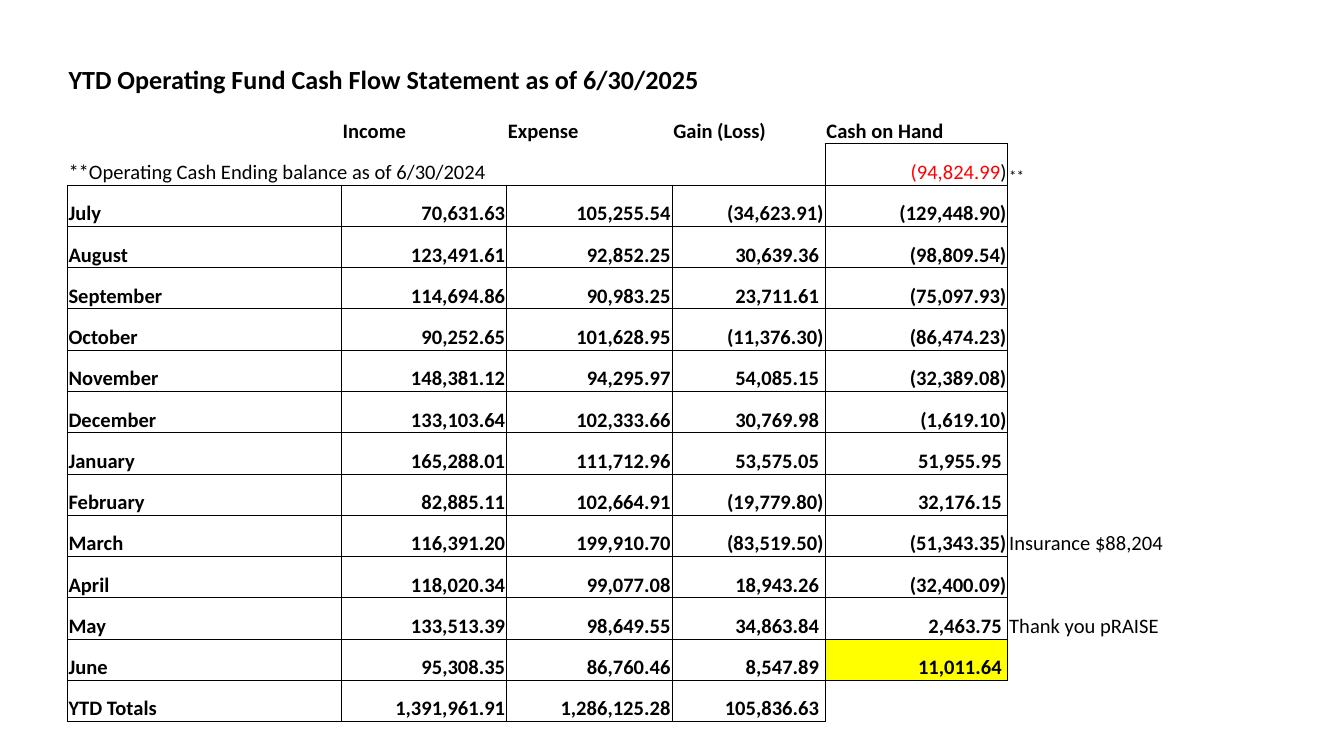
from lxml.etree import SubElement
from pptx import Presentation
from pptx.dml.color import RGBColor
from pptx.enum.text import MSO_ANCHOR, PP_ALIGN
from pptx.oxml.ns import qn
from pptx.util import Inches, Pt

FONT = "Calibri"
BLACK, RED, YELLOW = "000000", "FF0000", "FFFF00"
NO_STYLE_NO_GRID = "{2D5ABB26-0587-4C30-8999-92F81FD0307C}"

TITLE = "YTD Operating Fund Cash Flow Statement as of 6/30/2025"
HEADINGS = ["Income", "Expense", "Gain (Loss)", "Cash on Hand"]
OPENING_LABEL = "**Operating Cash Ending balance as of 6/30/2024"
OPENING_BALANCE = [("(94,824.99", RED), (")", BLACK)]
# label, income, expense, gain or loss, cash on hand
MONTHS = [
    ("July", 70631.63, 105255.54, -34623.91, -129448.90),
    ("August", 123491.61, 92852.25, 30639.36, -98809.54),
    ("September", 114694.86, 90983.25, 23711.61, -75097.93),
    ("October", 90252.65, 101628.95, -11376.30, -86474.23),
    ("November", 148381.12, 94295.97, 54085.15, -32389.08),
    ("December", 133103.64, 102333.66, 30769.98, -1619.10),
    ("January", 165288.01, 111712.96, 53575.05, 51955.95),
    ("February", 82885.11, 102664.91, -19779.80, 32176.15),
    ("March", 116391.20, 199910.70, -83519.50, -51343.35),
    ("April", 118020.34, 99077.08, 18943.26, -32400.09),
    ("May", 133513.39, 98649.55, 34863.84, 2463.75),
    ("June", 95308.35, 86760.46, 8547.89, 11011.64),
]
TOTALS = ("YTD Totals", 1391961.91, 1286125.28, 105836.63)
NOTES = {"March": "Insurance $88,204", "May": "Thank you pRAISE"}
HIGHLIGHTED_MONTH = "June"

SLIDE_WIDTH = Inches(10)
SLIDE_HEIGHT = SLIDE_WIDTH * 9 // 16
LEFT, TOP, TABLE_HEIGHT = 0.5, 0.34, 5.03
COLUMN_WIDTHS = [2.04, 1.23, 1.23, 1.14, 1.36, 0.96, 0.96]
TITLE_ROW, HEADING_ROW, OPENING_ROW, FIRST_MONTH_ROW = range(4)
TOTAL_ROW = FIRST_MONTH_ROW + len(MONTHS)
TOP_HEIGHTS = [0.38, 0.35]
BODY_ROWS = TOTAL_ROW - HEADING_ROW
ROW_HEIGHTS = TOP_HEIGHTS + [(TABLE_HEIGHT - sum(TOP_HEIGHTS)) / BODY_ROWS] * BODY_ROWS
GAIN, CASH, NOTE = 3, 4, 5
SPANS = {(TITLE_ROW, 0): 4, (OPENING_ROW, 0): 4}
SPANS |= {(row, NOTE): 2 for row, month in enumerate(MONTHS, FIRST_MONTH_ROW)
          if month[0] in NOTES}


def rgb(value):
    return RGBColor.from_string(value)


def accounting(value, column):
    """Bracket losses; pad gains by the width of a bracket in the signed columns."""
    if value < 0:
        return f"({-value:,.2f})"
    return f"{value:,.2f}" + (" " if column >= GAIN else "")


def write(cell, text, size=11, bold=True, align=PP_ALIGN.LEFT):
    """Fill a cell with a string or with a list of (text, colour) runs."""
    paragraph = cell.text_frame.paragraphs[0]
    paragraph.alignment = align
    for words, color in [(text, BLACK)] if isinstance(text, str) else text:
        run = paragraph.add_run()
        run.text = words
        run.font.name, run.font.size, run.font.bold = FONT, Pt(size), bold
        run.font.color.rgb = rgb(color)


def is_boxed(row, column):
    if row == OPENING_ROW:
        return column == CASH
    last_column = GAIN if row == TOTAL_ROW else CASH
    return FIRST_MONTH_ROW <= row <= TOTAL_ROW and 0 <= column <= last_column


def add_borders(cell, row, column):
    """Draw each side that this cell or its neighbour needs, and clear the others."""
    properties = cell._tc.get_or_add_tcPr()
    neighbours = {
        "a:lnL": (row, column - 1),
        "a:lnR": (row, column + SPANS.get((row, column), 1)),
        "a:lnT": (row - 1, column),
        "a:lnB": (row + 1, column),
    }
    for tag, neighbour in neighbours.items():
        line = SubElement(properties, qn(tag), w=str(Pt(0.5)))
        if is_boxed(row, column) or is_boxed(*neighbour):
            fill = SubElement(line, qn("a:solidFill"))
            SubElement(fill, qn("a:srgbClr"), val=BLACK)
        else:
            SubElement(line, qn("a:noFill"))


def prepare(cell, row, column):
    cell.margin_left = cell.margin_right = cell.margin_top = Inches(0.01)
    cell.margin_bottom = 0
    cell.vertical_anchor = MSO_ANCHOR.BOTTOM
    add_borders(cell, row, column)
    cell.fill.background()
    # Keeps empty cells from stretching their row
    SubElement(cell.text_frame.paragraphs[0]._p, qn("a:endParaRPr"), sz="1100")


def add_statement_table(slide):
    frame = slide.shapes.add_table(
        len(ROW_HEIGHTS), len(COLUMN_WIDTHS), Inches(LEFT), Inches(TOP),
        Inches(sum(COLUMN_WIDTHS)), Inches(TABLE_HEIGHT))
    table = frame.table
    table.first_row = table.horz_banding = False
    table._tbl.tblPr.find(qn("a:tableStyleId")).text = NO_STYLE_NO_GRID
    for column, width in zip(table.columns, COLUMN_WIDTHS):
        column.width = Inches(width)
    for row, height in zip(table.rows, ROW_HEIGHTS):
        row.height = Inches(height)
    for row in range(len(ROW_HEIGHTS)):
        for column in range(len(COLUMN_WIDTHS)):
            prepare(table.cell(row, column), row, column)
    for (row, column), span in SPANS.items():
        table.cell(row, column).merge(table.cell(row, column + span - 1))
    return table


def fill_statement(table):
    write(table.cell(TITLE_ROW, 0), TITLE, size=14)
    for column, heading in enumerate(HEADINGS, 1):
        write(table.cell(HEADING_ROW, column), heading)
    write(table.cell(OPENING_ROW, 0), OPENING_LABEL, bold=False)
    write(table.cell(OPENING_ROW, CASH), OPENING_BALANCE, bold=False, align=PP_ALIGN.RIGHT)
    write(table.cell(OPENING_ROW, NOTE), "**", size=8, bold=False)

    for row, (label, *amounts) in enumerate([*MONTHS, TOTALS], FIRST_MONTH_ROW):
        write(table.cell(row, 0), label)
        for column, amount in enumerate(amounts, 1):
            write(table.cell(row, column), accounting(amount, column), align=PP_ALIGN.RIGHT)
        if label in NOTES:
            write(table.cell(row, NOTE), NOTES[label], bold=False)
        if label == HIGHLIGHTED_MONTH:
            highlight = table.cell(row, CASH).fill
            highlight.solid()
            highlight.fore_color.rgb = rgb(YELLOW)


def main():
    presentation = Presentation()
    presentation.slide_width, presentation.slide_height = SLIDE_WIDTH, SLIDE_HEIGHT
    blank_layout = presentation.slide_layouts[6]
    slide = presentation.slides.add_slide(blank_layout)
    fill_statement(add_statement_table(slide))
    presentation.save("out.pptx")


if __name__ == "__main__":
    main()
